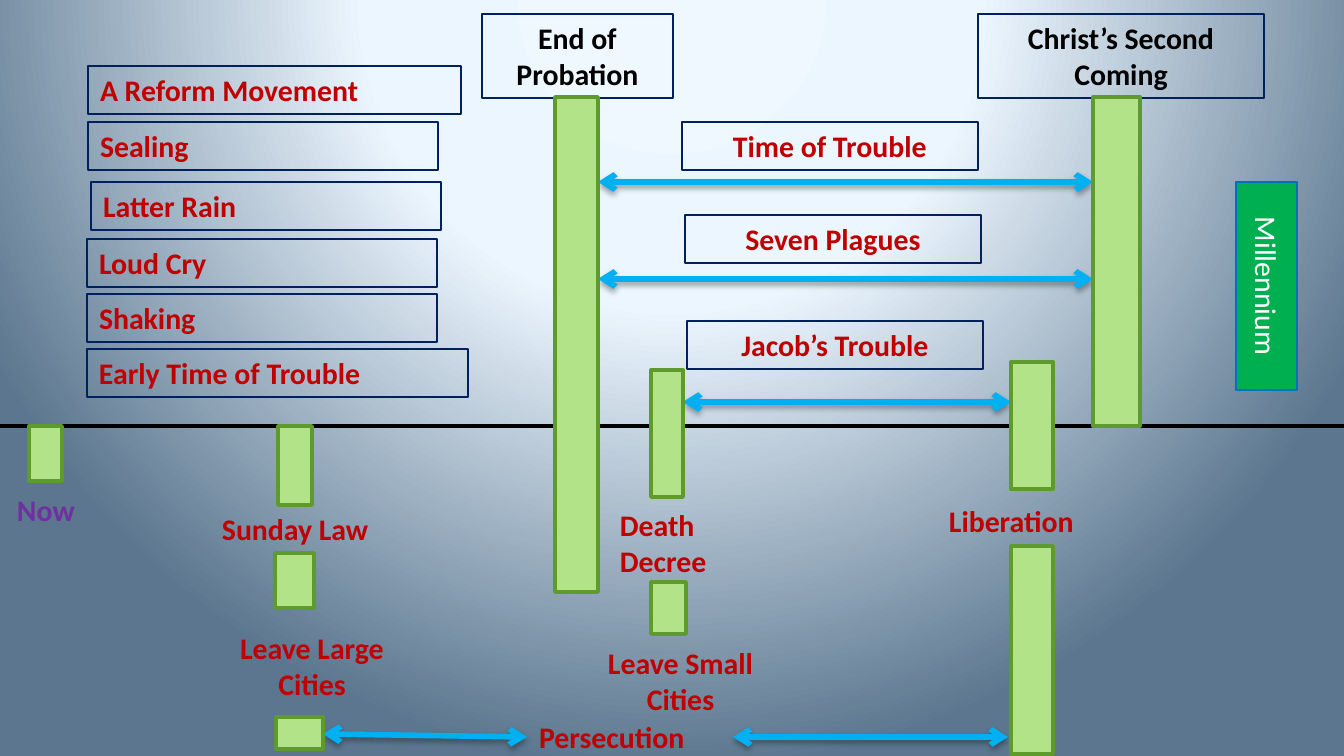
from lxml.etree import SubElement
from pptx import Presentation
from pptx.dml.color import RGBColor
from pptx.enum.shapes import MSO_CONNECTOR, MSO_SHAPE
from pptx.enum.text import MSO_ANCHOR, PP_ALIGN
from pptx.oxml import parse_xml
from pptx.oxml.ns import nsdecls, qn
from pptx.util import Pt

PX = 9144000 / 1344
COLORS = {
    "red": "C00000", "black": "000000", "purple": "7030A0", "white": "FFFFFF",
    "navy": "002060", "blue": "0070C0", "sky": "00B0F0", "green": "00B050",
    "bar": "B2E389", "bar edge": "5E9B2C",
}
LEFT, CENTER = PP_ALIGN.LEFT, PP_ALIGN.CENTER


def px(*lengths):
    return [round(length * PX) for length in lengths]


def add_block(area, text="", color="red", align=LEFT, fill=None, edge=None, width=0.75, bold=True):
    """Add a rectangle with optional fill, outline and text, one paragraph a line."""
    if fill or edge:
        shape = slide.shapes.add_shape(MSO_SHAPE.RECTANGLE, *px(*area))
        shape.shadow.inherit = False
        if fill:
            shape.fill.solid()
            shape.fill.fore_color.rgb = RGBColor.from_string(COLORS[fill])
        else:
            shape.fill.background()
        shape.line.color.rgb = RGBColor.from_string(COLORS[edge])
        shape.line.width = Pt(width)
    else:
        shape = slide.shapes.add_textbox(*px(*area))
    if text:
        frame = shape.text_frame
        side, end = px(12, 6)
        frame_format = {
            "text": text, "word_wrap": True, "vertical_anchor": MSO_ANCHOR.TOP,
            "margin_left": side, "margin_right": side,
            "margin_top": end, "margin_bottom": end,
        }
        for name, value in frame_format.items():
            setattr(frame, name, value)
        for paragraph in frame.paragraphs:
            paragraph.alignment = align
            for name, value in {"name": "Calibri", "size": Pt(16), "bold": bold}.items():
                setattr(paragraph.font, name, value)
            paragraph.font.color.rgb = RGBColor.from_string(COLORS[color])
    return shape


presentation = Presentation()
presentation.slide_width, presentation.slide_height = px(1344, 756)
slide = presentation.slides.add_slide(presentation.slide_layouts[6])

# Radial background
stops = "".join(
    f'<a:gs pos="{position * 1000}"><a:srgbClr val="{color}"/></a:gs>'
    for position, color in [(0, "F0F8FF"), (40, "ECF6FF"), (100, "5B768E")]
)
slide.element.cSld.insert(0, parse_xml(
    f'<p:bg {nsdecls("p", "a")}><p:bgPr><a:gradFill><a:gsLst>{stops}</a:gsLst>'
    '<a:path path="circle"><a:fillToRect l="50000" t="-80000" r="50000" b="180000"/></a:path>'
    '</a:gradFill><a:effectLst/></p:bgPr></p:bg>'
))

# Framed events
events = [
    ("A Reform Movement", 88, 66, 373),
    ("Sealing", 88, 122, 350),
    ("Latter Rain", 91, 182, 350),
    ("Loud Cry", 87, 239, 350),
    ("Shaking", 87, 294, 350),
    ("Early Time of Trouble", 87, 349, 381),
]
for text, left, top, width in events:
    add_block((left, top, width, 48), text, edge="navy")

periods = [
    ("Time of Trouble", 682, 122),
    ("Seven Plagues", 685, 215),
    ("Jacob’s Trouble", 687, 321),
]
for text, left, top in periods:
    add_block((left, top, 296, 48), text, align=CENTER, edge="navy")

milestones = [("End of\nProbation", 482, 191), ("Christ’s Second\nComing", 978, 286)]
for text, left, width in milestones:
    add_block((left, 14, width, 84), text, "black", CENTER, edge="navy")

# Timeline and arrows: x1, y1, x2, y2
AXIS = 426
lines = [
    (0, AXIS, 1344, AXIS),
    (598, 182, 1093, 182),
    (598, 279, 1093, 279),
    (683, 402, 1011, 402),
    (323, 734, 527, 737),
    (733, 737, 1008, 737),
]
for ends in lines:
    connector = slide.shapes.add_connector(MSO_CONNECTOR.STRAIGHT, *px(*ends))
    is_axis = ends[1] == AXIS
    connector.line.color.rgb = RGBColor.from_string(COLORS["black" if is_axis else "sky"])
    connector.line.width = Pt(2.25 if is_axis else 3)
    effects = SubElement(connector.element.spPr, qn("a:effectLst"))
    if not is_axis:
        for tag in ("a:headEnd", "a:tailEnd"):
            SubElement(connector.line._get_or_add_ln(), qn(tag), type="arrow")
        shadow = SubElement(effects, qn("a:outerShdw"), blurRad=str(Pt(3.1)),
                            dist=str(Pt(1.8)), dir="5400000", rotWithShape="0")
        shade = SubElement(shadow, qn("a:srgbClr"), val=COLORS["black"])
        SubElement(shade, qn("a:alpha"), val="35000")

# Bars
bars = [
    (29, AXIS, 33, 55), (278, AXIS, 34, 79), (275, 553, 39, 55), (276, 717, 47, 32),
    (555, 97, 43, 495), (1093, 97, 47, 329), (651, 370, 32, 127), (1011, 362, 42, 127),
    (651, 582, 35, 52), (1011, 546, 42, 208),
]
for area in bars:
    add_block(area, fill="bar", edge="bar edge", width=2)

# Labels below the timeline
labels = [
    ("Now", (5, 486, 90, 48), "purple", LEFT),
    ("Sunday Law", (210, 505, 231, 48), "red", LEFT),
    ("Leave Large\nCities", (196, 624, 232, 84), "red", CENTER),
    ("Death Decree", (608, 501, 160, 84), "red", LEFT),
    ("Leave Small\nCities", (562, 639, 237, 84), "red", CENTER),
    ("Liberation", (937, 497, 203, 48), "red", LEFT),
    ("Persecution", (527, 713, 306, 48), "red", LEFT),
]
for text, area, color, align in labels:
    add_block(area, text, color, align)

millennium = add_block((1236, 182, 61, 208), "Millennium", "white", CENTER,
                       fill="green", edge="blue", bold=False)
millennium.text_frame._txBody.bodyPr.set("vert", "vert")

presentation.save("out.pptx")
